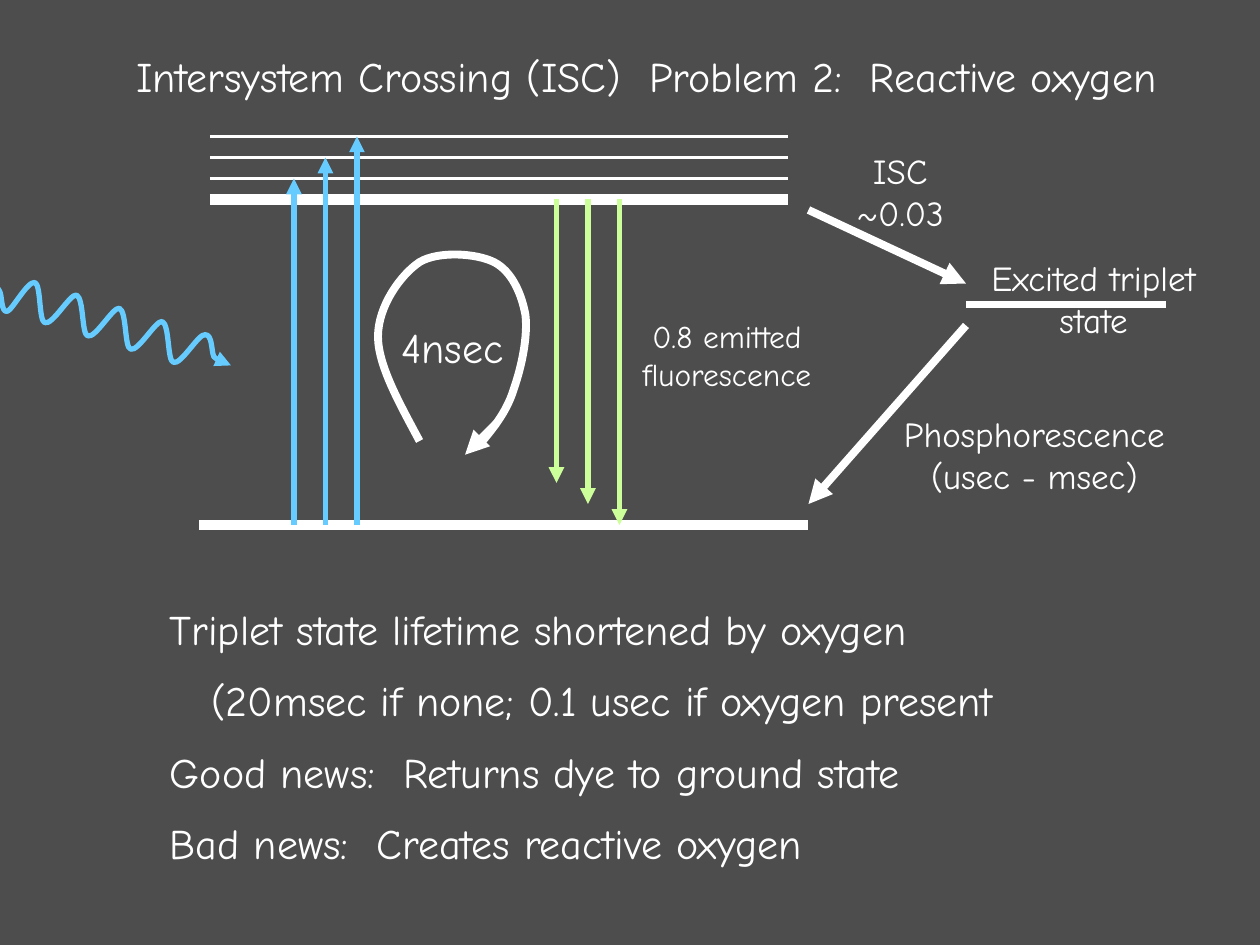
from math import cos, radians, sin

from pptx import Presentation
from pptx.dml.color import RGBColor
from pptx.enum.shapes import MSO_CONNECTOR as Conn
from pptx.enum.text import MSO_ANCHOR as Anchor, MSO_AUTO_SIZE as Auto, PP_ALIGN as Align
from pptx.oxml.ns import qn
from pptx.util import Inches, Pt
from lxml.etree import SubElement as Sub

WHITE, BLUE, GREEN = "FFFFFF", "66CCFF", "CCFF99"
UNIT = Inches(1) / 12
hue = RGBColor.from_string

deck = Presentation()
deck.slide_width, deck.slide_height = Inches(10), Inches(7.5)
slide = deck.slides.add_slide(deck.slide_layouts[5])
slide.background.fill.solid()
slide.background.fill.fore_color.rgb = hue("4D4D4D")
shapes = slide.shapes


def draw(home, start, end, color, width, head=False):
    line = home.add_connector(Conn.STRAIGHT, *(round(n * UNIT) for n in start + end))
    line.line.color.rgb = hue(color)
    line.line.width = Pt(width)
    if head:
        Sub(line.line._get_or_add_ln(), qn("a:tailEnd"), type="triangle")
    Sub(line._element.spPr, qn("a:effectLst"))


def write(box, place, rows, size, align=Align.CENTER, gap=0):
    box.left, box.top, box.width, box.height = map(Inches, place)
    frame = box.text_frame
    form = {"word_wrap": False, "auto_size": Auto.NONE, "vertical_anchor": Anchor.MIDDLE}
    for key, value in form.items():
        setattr(frame, key, value)
    frame.text = "\n".join(rows)
    font = {"name": "Comic Neue", "size": Pt(size), "bold": False}
    for i, para in enumerate(frame.paragraphs):
        para.alignment = align
        para.space_before = Pt(gap if i else 0)
        for key, value in font.items():
            setattr(para.font, key, value)
        para.font.color.rgb = hue(WHITE)
    return frame


write(shapes.title, (0.56, 0.35, 9.14, 0.5),
      ["Intersystem Crossing (ISC)  Problem 2:  Reactive oxygen"], 24)

levels = shapes.add_group_shape().shapes
cycle = shapes.add_group_shape().shapes

draw(levels, (19, 50), (77, 50), WHITE, 6)

wave = [(-0.04, 2.28), (-0.03, 2.29), (-0.01, 2.28), (0, 2.31),
        (0.02, 2.34), (0.01, 2.48), (0.06, 2.47), (0.1, 2.46), (0.22, 2.23), (0.28, 2.24)]
swing = [(0.33, 2.26), (0.31, 2.55), (0.36, 2.56),
         (0.42, 2.58), (0.56, 2.33), (0.61, 2.34)]
for i in range(4):
    wave += [(x + 0.34 * i, y + 0.105 * i) for x, y in swing]
wave += [(1.69, 2.65), (1.68, 2.79), (1.7, 2.83), (1.73, 2.86), (1.76, 2.86), (1.77, 2.87)]

loop = [(3.33, 3.5), (3.17, 3.2), (3, 2.9), (3, 2.67),
        (3, 2.43), (3.18, 2.18), (3.33, 2.08), (3.48, 1.99), (3.78, 2.01), (3.92, 2.08),
        (4.06, 2.15), (4.14, 2.33), (4.17, 2.5), (4.19, 2.67), (4.14, 2.91), (4.08, 3.08),
        (4.03, 3.25), (3.93, 3.38), (3.83, 3.5)]

midx, midy, tilt = 0.87, 2.58, 17
c, s = cos(radians(tilt)), sin(radians(tilt))
flat = [(midx + (x - midx) * c + (y - midy) * s, midy - (x - midx) * s + (y - midy) * c)
        for x, y in wave]

for home, knots, turn, color, width in [(levels, flat, tilt, BLUE, 3), (cycle, loop, 0, WHITE, 4.5)]:
    dots = [tuple(map(Inches, knot)) for knot in knots]
    pen = home.build_freeform(*dots[0])
    pen.add_line_segments(dots[1:], close=False)
    curve = pen.convert_to_shape()
    legs = list(curve._element.iter(qn("a:lnTo")))
    for i in range(0, len(legs), 3):
        bend = Sub(legs[i].getparent(), qn("a:cubicBezTo"))
        for leg in legs[i:i + 3]:
            bend.append(leg[0])
            leg.getparent().remove(leg)
    curve.rotation = turn
    curve.shadow.inherit = False
    curve.fill.background()
    curve.line.color.rgb = hue(color)
    curve.line.width = Pt(width)

draw(levels, (20.9, 34.3), (22, 34.8), BLUE, 3, True)
draw(cycle, (47.3, 40.3), (44.3, 43.3), WHITE, 4.5, True)

for y, width in [(19, 6), (17, 1.5), (15, 1.5), (13, 1.5)]:
    draw(levels, (20, y), (75, y), WHITE, width)
for i in range(3):
    draw(levels, (28 + 3 * i, 50), (28 + 3 * i, 17 - 2 * i), BLUE, 3, True)
for i in range(3):
    draw(levels, (53 + 3 * i, 19), (53 + 3 * i, 46 + 2 * i), GREEN, 3, True)

draw(shapes, (77, 20), (92, 27), WHITE, 4.5, True)
draw(shapes, (92, 29), (111, 29), WHITE, 4.5)
draw(shapes, (92, 31), (77, 48), WHITE, 4.5, True)

labels = [
    ((3.04, 2.47, 1.1, 0.57), ["4nsec"], 24),
    ((4.92, 2.42, 1.7, 0.8), ["0.8 emitted", "fluorescence"], 18),
    ((6.67, 1.08, 0.95, 0.88), ["ISC", "~0.03"], 20),
    ((7.61, 1.93, 2.14, 0.88), ["Excited triplet", "state"], 20),
    ((7.01, 3.17, 2.4, 0.88), ["Phosphorescence", "(usec - msec)"], 20),
]
for place, rows, size in labels:
    write(shapes.add_textbox(0, 0, 0, 0), place, rows, size)

notes = write(shapes.add_textbox(0, 0, 0, 0), (1.25, 4.51, 7.23, 2.66), [
    "Triplet state lifetime shortened by oxygen",
    "(20msec if none; 0.1 usec if oxygen present",
    "Good news:  Returns dye to ground state",
    "Bad news:  Creates reactive oxygen",
], 24, Align.LEFT, 12)
notes.paragraphs[1]._p.get_or_add_pPr().set("marL", str(Inches(0.33)))

deck.save("out.pptx")
